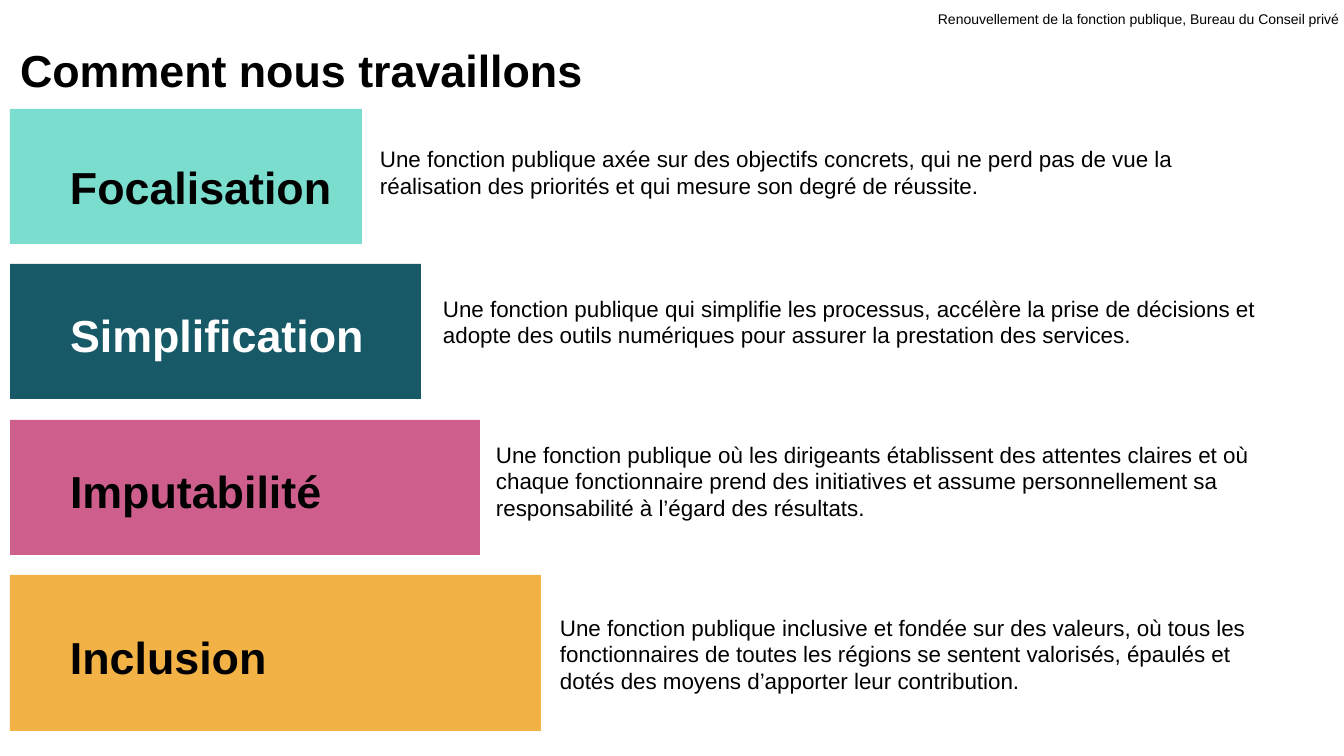
from dataclasses import dataclass

from pptx import Presentation
from pptx import util as u
from pptx.dml.color import RGBColor
from pptx.enum import shapes, text

PX = 9071.43  # EMU in one px, at 100.8 px to the inch


@dataclass(frozen=True)
class Theme:
    font: str = "Arial"
    black: str = "000000"
    white: str = "FFFFFF"
    mint: str = "7ADDCD"
    teal: str = "185968"
    pink: str = "CE5F8D"
    amber: str = "F2B246"
    heading: int = 32
    body: int = 16
    header: int = 10


theme = Theme()


def px(*lengths):
    return [u.Emu(round(length * PX)) for length in lengths]


def write(shape, words, size, color=theme.black, bold=False, wrap=True,
          anchor=text.MSO_ANCHOR.MIDDLE, margins=(10, 5, 10, 5)):
    """Fill a shape with one left-aligned paragraph; margins run left, top, right, bottom."""
    frame = shape.text_frame
    frame.word_wrap = wrap
    frame.vertical_anchor = anchor
    (frame.margin_left, frame.margin_top,
     frame.margin_right, frame.margin_bottom) = px(*margins)
    para = frame.paragraphs[0]
    para.text = words
    para.alignment = text.PP_ALIGN.LEFT
    para.font.name = theme.font
    para.font.size = u.Pt(size)
    para.font.bold = bold
    para.font.color.rgb = RGBColor.from_string(color)


deck = Presentation()
deck.slide_width, deck.slide_height = px(1344, 756)
page = deck.slides.add_slide(deck.slide_layouts[6])

title = page.shapes.add_textbox(*px(10, 38, 1007, 40))
write(title, "Comment nous travaillons", theme.heading, bold=True,
      anchor=text.MSO_ANCHOR.TOP)

# Label, fill, label colour, bar (top, width, height), label drop,
# description, description box, description lift
principles = [
    ("Focalisation", theme.mint, theme.black, (109, 352, 135), 21,
     "Une fonction publique axée sur des objectifs concrets, qui ne perd pas de vue "
     "la réalisation des priorités et qui mesure son degré de réussite.",
     (380, 121, 882, 127), 24),
    ("Simplification", theme.teal, theme.white, (264, 411, 135), 7,
     "Une fonction publique qui simplifie les processus, accélère la prise de décisions "
     "et adopte des outils numériques pour assurer la prestation des services.",
     (443, 274, 841, 119), 24),
    ("Imputabilité", theme.pink, theme.black, (420, 470, 135), 7,
     "Une fonction publique où les dirigeants établissent des attentes claires et où "
     "chaque fonctionnaire prend des initiatives et assume personnellement sa "
     "responsabilité à l’égard des résultats.",
     (496, 426, 788, 134), 24),
    ("Inclusion", theme.amber, theme.black, (575, 531, 156), 7,
     "Une fonction publique inclusive et fondée sur des valeurs, où tous les "
     "fonctionnaires de toutes les régions se sentent valorisés, épaulés et dotés "
     "des moyens d’apporter leur contribution.",
     (560, 587, 713, 134), 0),
]

for label, fill, color, (top, width, height), drop, words, place, lift in principles:
    bar = page.shapes.add_shape(shapes.MSO_SHAPE.RECTANGLE, *px(10, top, width, height))
    bar.shadow.inherit = False
    bar.fill.solid()
    bar.fill.fore_color.rgb = RGBColor.from_string(fill)
    bar.line.fill.background()
    write(bar, label, theme.heading, color, bold=True, margins=(60, drop, 10, 0))

    description = page.shapes.add_textbox(*px(*place))
    write(description, words, theme.body, margins=(0, 0, 0, lift))

header = page.shapes.add_textbox(*px(928, 6, 424, 27))
write(header, "Renouvellement de la fonction publique, Bureau du Conseil privé",
      theme.header, wrap=False, anchor=text.MSO_ANCHOR.TOP)

deck.save("out.pptx")
